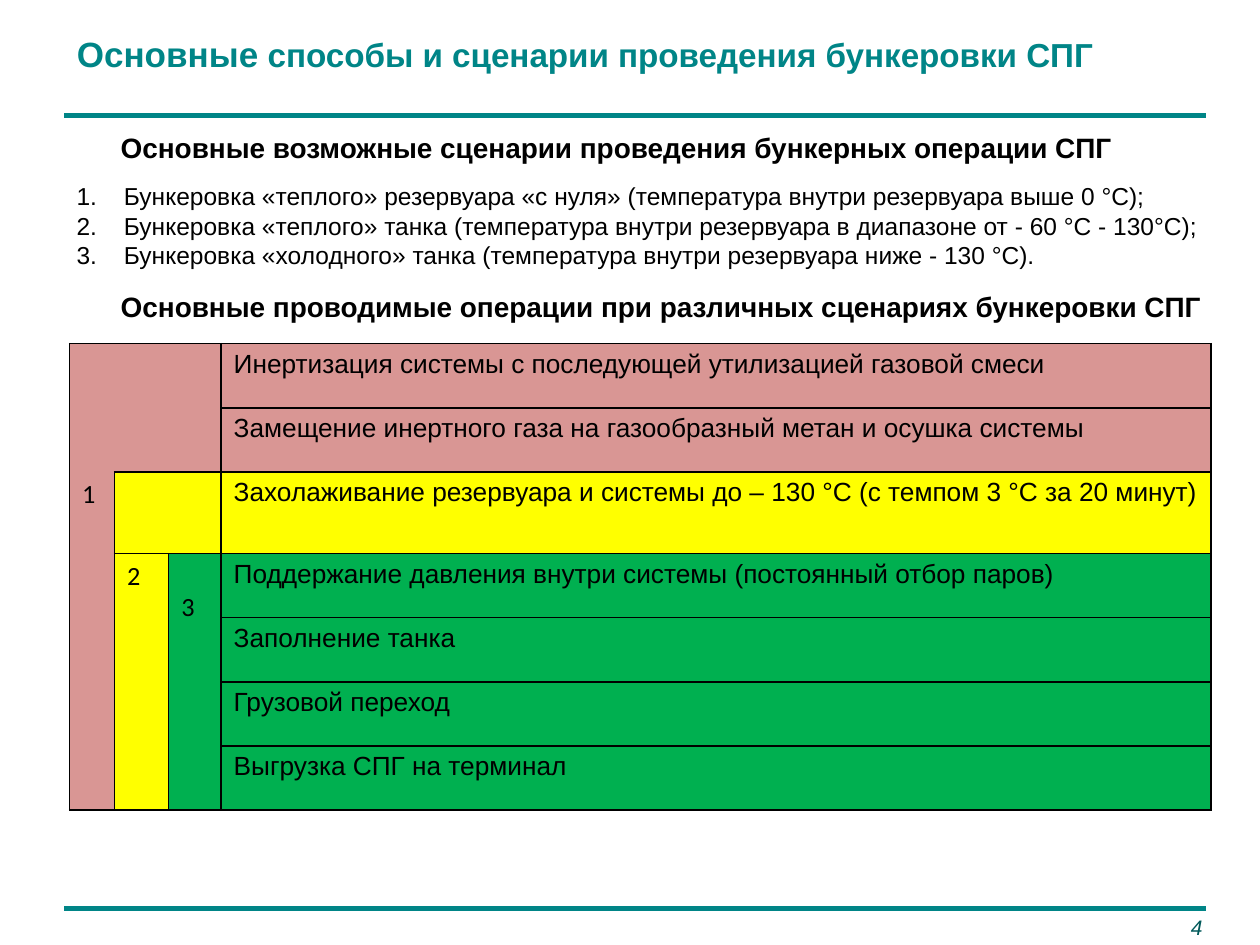
from dataclasses import dataclass

from lxml import etree
from pptx import Presentation
from pptx.dml.color import RGBColor
from pptx.enum.shapes import MSO_CONNECTOR
from pptx.enum.text import MSO_ANCHOR, MSO_AUTO_SIZE, PP_ALIGN
from pptx.oxml.ns import qn
from pptx.util import Pt

LEFT, RIGHT = PP_ALIGN.LEFT, PP_ALIGN.RIGHT
TOP = MSO_ANCHOR.TOP
NO_AUTOFIT = MSO_AUTO_SIZE.NONE
STRAIGHT = MSO_CONNECTOR.STRAIGHT

COLORS = {
    "teal": "008587", "dark_teal": "00595A", "black": "000000",
    "pink": "D99694", "yellow": "FFFF00", "green": "00B050",
}
PLAIN_TABLE_STYLE = "{2D5ABB26-0587-4C30-8999-92F81FD0307C}"
SIDES = {"L": "a:lnL", "R": "a:lnR", "T": "a:lnT", "B": "a:lnB"}


@dataclass
class Heading:
    text: str
    top: float
    width: float


@dataclass
class Operation:
    text: str
    color: str
    height: float = 36.6


@dataclass
class ScenarioBlock:
    """A merged area left of the operations, with its drawn sides."""
    row: int
    column: int
    rows: int
    columns: int
    color: str
    sides: str
    number: str = ""
    margin_top: float = 3.6


HEADINGS = [
    Heading("Основные возможные сценарии проведения бункерных операции СПГ", 71.3, 612),
    Heading("Основные проводимые операции при различных сценариях бункеровки СПГ", 162, 652),
]
SCENARIOS = [
    "Бункеровка «теплого» резервуара «с нуля» (температура внутри резервуара выше 0 °С);",
    "Бункеровка «теплого» танка (температура внутри резервуара в диапазоне от - 60 °С - 130°С);",
    "Бункеровка «холодного» танка (температура внутри резервуара ниже - 130 °С).",
]
OPERATIONS = [
    Operation("Инертизация системы с последующей утилизацией газовой смеси", "pink"),
    Operation("Замещение инертного газа на газообразный метан и осушка системы", "pink"),
    Operation("Захолаживание резервуара и системы до – 130 °С (с темпом 3 °С за 20 минут)",
              "yellow", 46.8),
    Operation("Поддержание давления внутри системы (постоянный отбор паров)", "green"),
    Operation("Заполнение танка", "green"),
    Operation("Грузовой переход", "green"),
    Operation("Выгрузка СПГ на терминал", "green"),
]
BLOCKS = [
    ScenarioBlock(0, 0, 2, 3, "pink", "LRT"),
    ScenarioBlock(2, 0, 5, 1, "pink", "LRB", "1"),
    ScenarioBlock(2, 1, 1, 2, "yellow", "LRT"),
    ScenarioBlock(3, 1, 4, 1, "yellow", "LRB", "2"),
    ScenarioBlock(3, 2, 4, 1, "green", "LRTB", "3", 21.6),
]
COLUMN_WIDTHS = [25.7, 30.9, 30, 565.6]


def rgb(name: str) -> RGBColor:
    return RGBColor.from_string(COLORS[name])


def add_text(paragraph, text: str, *, size: float, font: str = "Arial",
             color: str = "black", bold: bool = False, italic: bool = False,
             align=LEFT) -> None:
    paragraph.alignment = align
    run = paragraph.add_run()
    run.text = text
    run.font.size = Pt(size)
    run.font.name = font
    run.font.bold = bold
    run.font.italic = italic
    run.font.color.rgb = rgb(color)


def add_frame(slide, left: float, top: float, width: float, height: float):
    frame = slide.shapes.add_textbox(Pt(left), Pt(top), Pt(width), Pt(height)).text_frame
    frame.word_wrap = True
    return frame


def add_rule(slide, y: float) -> None:
    rule = slide.shapes.add_connector(STRAIGHT, Pt(36.7), Pt(y), Pt(689), Pt(y))
    rule.line.color.rgb = rgb("teal")
    rule.line.width = Pt(3)
    etree.SubElement(rule._element.spPr, qn("a:effectLst"))


def number_paragraph(paragraph) -> None:
    properties = paragraph._p.get_or_add_pPr()
    properties.set("marL", str(Pt(27)))
    properties.set("indent", str(-Pt(27)))
    etree.SubElement(properties, qn("a:buFont"), typeface="Arial")
    etree.SubElement(properties, qn("a:buAutoNum"), type="arabicPeriod")


def format_cell(cell, color: str, sides: str) -> None:
    properties = cell._tc.get_or_add_tcPr()
    for side, tag in SIDES.items():
        if side in sides:
            border = etree.SubElement(properties, qn(tag), w=str(Pt(1)))
            fill = etree.SubElement(border, qn("a:solidFill"))
            etree.SubElement(fill, qn("a:srgbClr"), val=COLORS["black"])
    cell.fill.solid()
    cell.fill.fore_color.rgb = rgb(color)


def add_block(table, block: ScenarioBlock) -> None:
    last_row = block.row + block.rows - 1
    last_column = block.column + block.columns - 1
    cell = table.cell(block.row, block.column)
    cell.merge(table.cell(last_row, last_column))
    format_cell(cell, block.color, block.sides)
    cell.margin_top = Pt(block.margin_top)
    if block.number:
        add_text(cell.text_frame.paragraphs[0], block.number, size=15, font="Calibri")


def add_operations_table(slide) -> None:
    heights = [operation.height for operation in OPERATIONS]
    frame = slide.shapes.add_table(len(heights), len(COLUMN_WIDTHS), Pt(39.8), Pt(196.4),
                                   Pt(sum(COLUMN_WIDTHS)), Pt(sum(heights)))
    table = frame.table
    table.first_row = table.horz_banding = False
    table._tbl.tblPr.find(qn("a:tableStyleId")).text = PLAIN_TABLE_STYLE
    for column, width in zip(table.columns, COLUMN_WIDTHS):
        column.width = Pt(width)
    for index, operation in enumerate(OPERATIONS):
        table.rows[index].height = Pt(operation.height)
        cell = table.cell(index, len(COLUMN_WIDTHS) - 1)
        format_cell(cell, operation.color, "LRTB")
        cell.margin_right = Pt(3.6)
        add_text(cell.text_frame.paragraphs[0], operation.text, size=15)
    for block in BLOCKS:
        add_block(table, block)


def main() -> None:
    deck = Presentation()
    deck.slide_width, deck.slide_height = Pt(720), Pt(540)
    slide = deck.slides.add_slide(deck.slide_layouts[5])

    # Title
    title = slide.shapes.title
    title.left, title.top, title.width, title.height = Pt(36.7), Pt(15.1), Pt(612), Pt(44.6)
    title.text_frame.vertical_anchor = TOP
    title.text_frame.auto_size = NO_AUTOFIT
    title.text_frame.word_wrap = True
    title_line = title.text_frame.paragraphs[0]
    add_text(title_line, "Основные", size=20, color="teal", bold=True)
    add_text(title_line, " способы и сценарии проведения бункеровки СПГ",
             size=19, color="teal", bold=True)

    # Rules and page number
    for y in (66.2, 519.1):
        add_rule(slide, y)
    page_number = add_frame(slide, 632.2, 519.1, 62, 20)
    add_text(page_number.paragraphs[0], "4", size=12, color="dark_teal",
             italic=True, align=RIGHT)

    # Headings and numbered scenarios
    for heading in HEADINGS:
        frame = add_frame(slide, 61.9, heading.top, heading.width, 26.6)
        add_text(frame.paragraphs[0], heading.text, size=16, bold=True)
    scenarios = add_frame(slide, 36.7, 100.1, 674.6, 58.3)
    for index, scenario in enumerate(SCENARIOS):
        paragraph = scenarios.add_paragraph() if index else scenarios.paragraphs[0]
        number_paragraph(paragraph)
        add_text(paragraph, scenario, size=14)

    # Operations by scenario
    add_operations_table(slide)
    deck.save("out.pptx")


if __name__ == "__main__":
    main()
